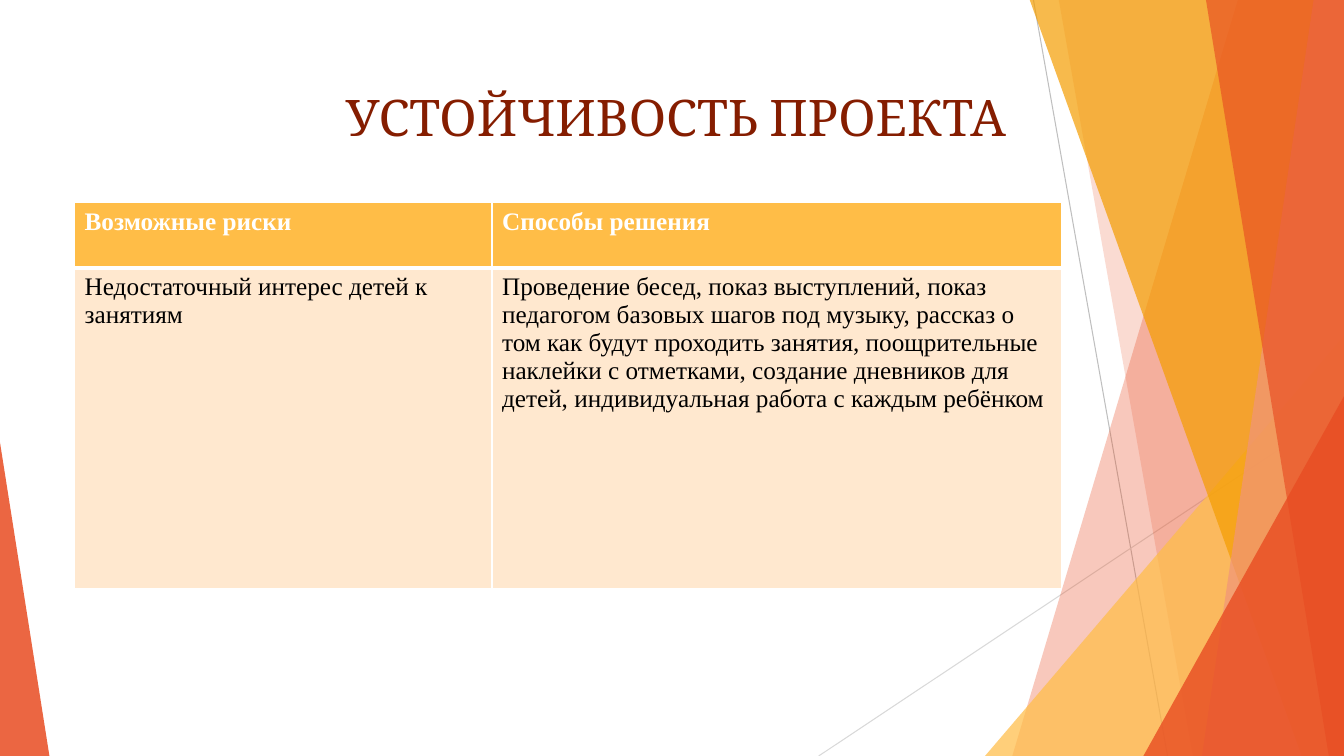
import pptx
import pptx.util
import pptx.dml.color
import pptx.enum.shapes
import pptx.enum.text
import pptx.oxml
import pptx.oxml.ns
import lxml.etree

RGB = pptx.dml.color.RGBColor
RED = RGB(0xE8, 0x4C, 0x22)
PINK = RGB(0xF1, 0x94, 0x7A)
GOLD = RGB(0xFF, 0xBD, 0x47)
AMBER = RGB(0xF4, 0x9D, 0x00)
CREAM = RGB(0xFF, 0xE8, 0xCF)
BROWN = RGB(0x85, 0x1D, 0x00)
GREY = RGB(0xBF, 0xBF, 0xBF)
PALE = RGB(0xD9, 0xD9, 0xD9)
WHITE = RGB(0xFF, 0xFF, 0xFF)
BLACK = RGB(0, 0, 0)

# Content, lengths in px (100 px to the inch)
PX = 9144
WIDE, HIGH = 1333, 750
TITLE = "УСТОЙЧИВОСТЬ ПРОЕКТА"
ROWS = [
    ("Возможные риски", "Способы решения"),
    ("Недостаточный интерес детей к занятиям",
     "Проведение бесед, показ выступлений, показ педагогом базовых шагов "
     "под музыку, рассказ о том как будут проходить занятия, поощрительные "
     "наклейки с отметками, создание дневников для детей, индивидуальная "
     "работа с каждым ребёнком"),
]
COLS = (414, 565)
TALL = (65, 318)
# Row look: fill, font colour, bold, top and bottom border in points
LOOKS = [(GOLD, WHITE, True, 1, 3), (CREAM, BLACK, False, 3, 1)]

LINES = [((1025, 0, 1158, HIGH), GREY), ((WIDE, 403, 812, HIGH), PALE)]
# Bands: left edge at top and foot of the slide; wedges: left, top, width, tip
DECOR = [
    ("band", (1228, 1004), RED, 30),
    ("band", (1050, 1183), RED, 20),
    ("wedge", (977, 333, 356, 1), GOLD, 72),
    ("band", (1021, 1291), AMBER, 70),
    ("band", (1303, 1192), PINK, 70),
    ("band", (1196, 1318), RED, 65),
    ("wedge", (1134, 393, 199, 1), RED, 80),
    ("wedge", (0, 439, 49, 0), RED, 85),
]


def emu(*nums):
    return [pptx.util.Emu(n * PX) for n in nums]


def style(run, font, size, color, bold=False):
    run.font.name, run.font.size = font, pptx.util.Pt(size)
    run.font.color.rgb, run.font.bold = color, bold


def border(cell, top, foot):
    props = cell._tc.get_or_add_tcPr()
    for spot, (side, wide) in enumerate(zip("LRTB", (1, 1, top, foot))):
        props.insert(spot, pptx.oxml.parse_xml(
            f'<a:ln{side} {pptx.oxml.ns.nsdecls("a")} w="{wide * 12700}">'
            f'<a:solidFill><a:srgbClr val="{WHITE}"/></a:solidFill></a:ln{side}>'))


def paint(shape, color, alpha):
    shape.shadow.inherit = False
    shape.line.fill.background()
    shape.fill.solid()
    shape.fill.fore_color.rgb = color
    tone = shape.fill._xPr.find(".//" + pptx.oxml.ns.qn("a:srgbClr"))
    lxml.etree.SubElement(tone, pptx.oxml.ns.qn("a:alpha"), val=str(alpha * 1000))


deck = pptx.Presentation()
deck.slide_width, deck.slide_height = emu(WIDE, HIGH)
slide = deck.slides.add_slide(deck.slide_layouts[6])
shapes = slide.shapes

# Thin lines
for ends, color in LINES:
    line = shapes.add_connector(pptx.enum.shapes.MSO_CONNECTOR.STRAIGHT, *emu(*ends))
    line.line.color.rgb = color
    line.line.width = pptx.util.Pt(0.75)
    lxml.etree.SubElement(line._element.spPr, pptx.oxml.ns.qn("a:effectLst"))

# Slanted bands and wedges
for kind, geo, color, alpha in DECOR:
    if kind == "band":
        top, foot = geo
        form = shapes.build_freeform(top, -1, scale=PX)
        form.add_line_segments([(WIDE, -1), (WIDE, HIGH), (foot, HIGH)], close=True)
        part = form.convert_to_shape()
    else:
        left, top, wide, tip = geo
        part = shapes.add_shape(pptx.enum.shapes.MSO_SHAPE.ISOSCELES_TRIANGLE,
                                *emu(left, top, wide, HIGH - top))
        part.adjustments[0] = tip
    paint(part, color, alpha)

# Title
frame = shapes.add_textbox(*emu(74, 80, 1193, 71)).text_frame
frame.word_wrap = True
frame.vertical_anchor = pptx.enum.text.MSO_ANCHOR.MIDDLE
frame.text = TITLE
head = frame.paragraphs[0]
head.alignment = pptx.enum.text.PP_ALIGN.CENTER
style(head.runs[0], "Cambria", 36, BROWN)

# Table of risks
table = shapes.add_table(len(ROWS), len(COLS),
                         *emu(74, 201, sum(COLS), sum(TALL))).table
for col, wide in zip(table.columns, emu(*COLS)):
    col.width = wide
for row, tall, texts, look in zip(table.rows, emu(*TALL), ROWS, LOOKS):
    row.height = tall
    fill, color, bold, top, foot = look
    for cell, text in zip(row.cells, texts):
        cell.text = text
        cell.fill.solid()
        cell.fill.fore_color.rgb = fill
        border(cell, top, foot)
        style(cell.text_frame.paragraphs[0].runs[0], "Times New Roman", 18, color, bold)

deck.save("out.pptx")
